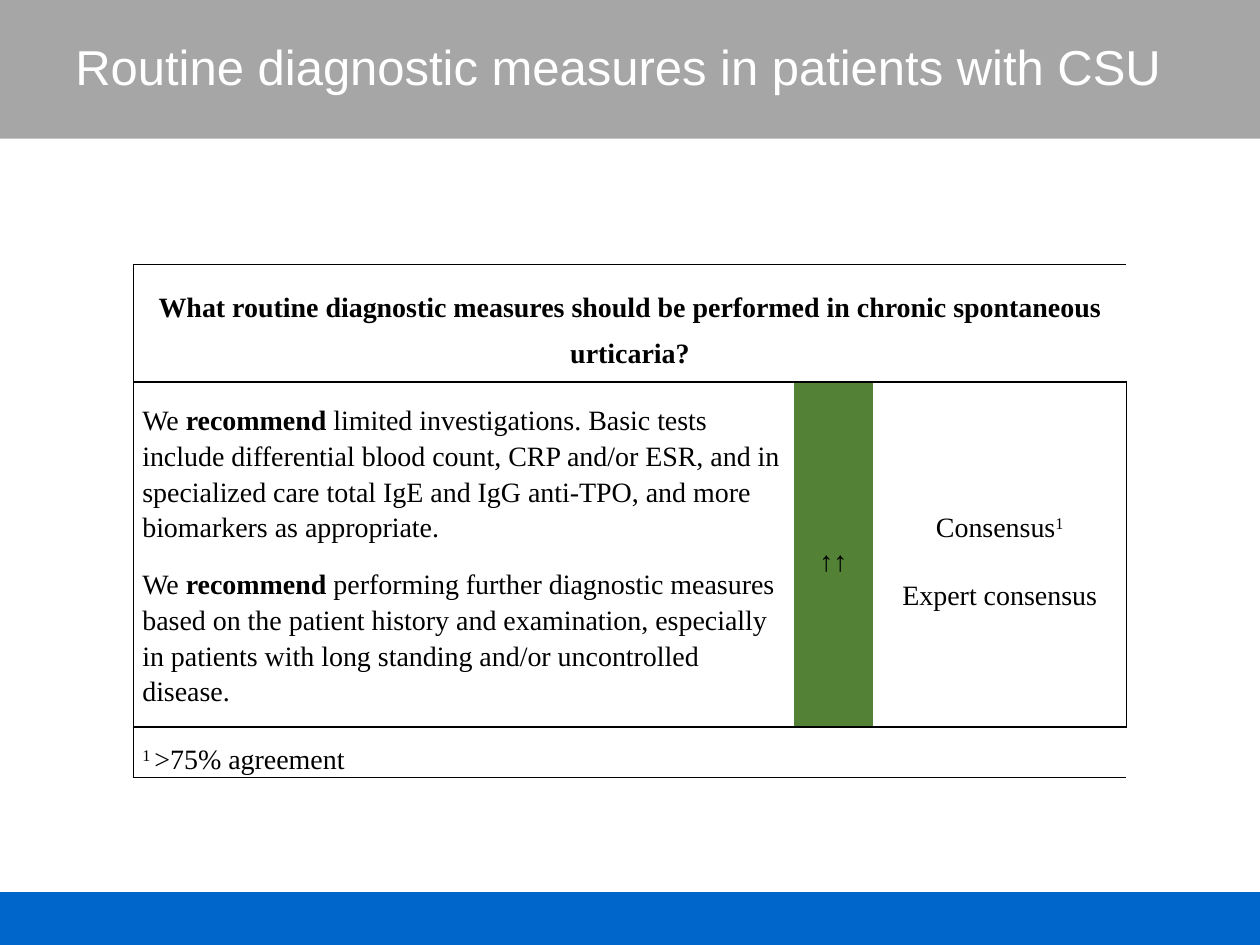
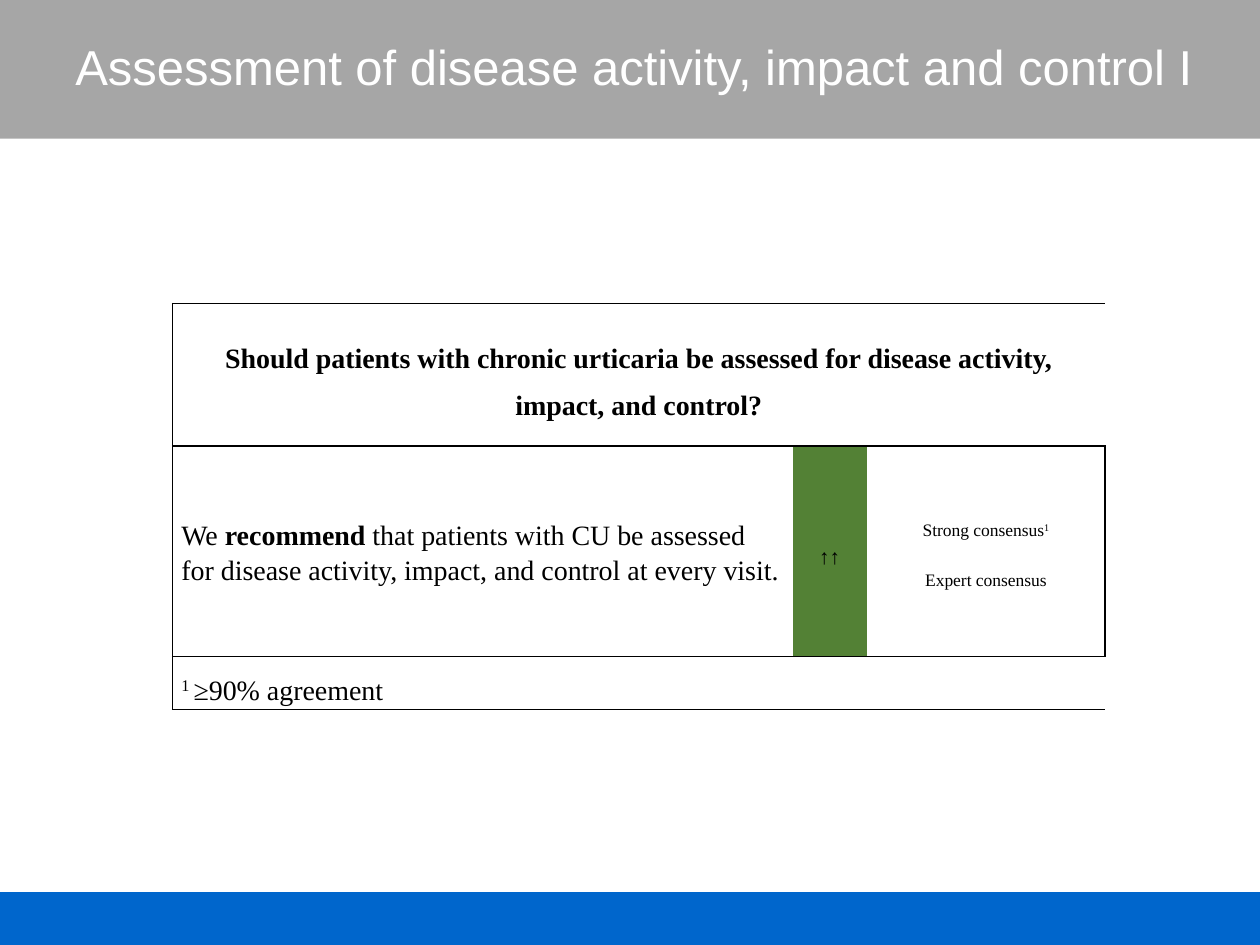
from dataclasses import dataclass

from lxml import etree
from pptx import Presentation
from pptx.dml.color import RGBColor
from pptx.enum.shapes import MSO_SHAPE as Shape
from pptx.enum.text import MSO_ANCHOR as Anchor, PP_ALIGN as Align
from pptx.oxml.ns import qn
from pptx.util import Inches, Pt


@dataclass(frozen=True)
class Theme:
    header: str = "A6A6A6"
    footer: str = "0066CC"
    title: str = "FFFFFF"
    text: str = "000000"
    strength: str = "538135"
    title_font: str = "Arial"
    table_font: str = "Times New Roman"
    title_size: int = 28
    body_size: int = 16
    medium_size: int = 12
    small_size: int = 10
    border_width: int = 1


THEME = Theme()
BOLD, SUPERSCRIPT = "bold", "superscript"
RECOMMEND = ("recommend", BOLD)


class Deck:
    """Holds the theme and the current slide and draws each kind of element."""

    def __init__(self, theme):
        self.theme = theme
        self.presentation = Presentation()
        self.presentation.slide_width = Inches(10)
        self.presentation.slide_height = Inches(7.5)
        self.slide = None

    def add_slide(self, title, title_width):
        self.slide = self.presentation.slides.add_slide(self.presentation.slide_layouts[6])
        self.band(7.08, 0.42, self.theme.footer)
        self.band(0, 1.1, self.theme.header)
        self.title(title, title_width)

    def band(self, top, height, color):
        band = self.slide.shapes.add_shape(
            Shape.RECTANGLE, 0, Inches(top), self.presentation.slide_width, Inches(height))
        band.shadow.inherit = False
        band.fill.solid()
        band.fill.fore_color.rgb = RGBColor.from_string(color)
        band.line.fill.background()

    def title(self, text, width):
        box = self.slide.shapes.add_textbox(Inches(0.5), Inches(0.22), Inches(width), Inches(0.61))
        box.text_frame.word_wrap = True
        box.text_frame.vertical_anchor = Anchor.MIDDLE
        paragraph = box.text_frame.paragraphs[0]
        paragraph.text = text
        self.set_font(paragraph.font, self.theme.title_font, self.theme.title_size, self.theme.title)

    def set_font(self, font, name, size, color):
        font.name = name
        font.size = Pt(size)
        font.color.rgb = RGBColor.from_string(color)

    def recommendation_table(self, left, top, widths, heights, question, advice,
                             consensus, agreement, arrow_size, consensus_size):
        body = self.theme.body_size
        table = self.slide.shapes.add_table(
            len(heights), len(widths), Inches(left), Inches(top),
            Inches(sum(widths)), Inches(sum(heights))).table
        table.first_row = table.horz_banding = False
        for column, width in zip(table.columns, widths):
            column.width = Inches(width)
        for row, height in zip(table.rows, heights):
            row.height = Inches(height)
        last = len(widths) - 1
        for row in range(len(heights)):
            for column in range(len(widths)):
                sides = "TB" + "L" * (column == 0) + "R" * (column == last)
                self.format_cell(table.cell(row, column), sides,
                                 self.theme.strength if (row, column) == (1, 1) else None)
        for row in (0, 2):
            table.cell(row, 0).merge(table.cell(row, last))

        self.fill_text(table.cell(0, 0), [[(question, BOLD)]], body, Align.CENTER)
        self.fill_text(table.cell(1, 0), advice, body, Align.LEFT, line_spacing=1.15)
        self.fill_text(table.cell(1, 1), [[("↑↑", BOLD)]], arrow_size, Align.CENTER,
                       before=0, after=8)
        self.fill_text(table.cell(1, 2), [[consensus, ("1", SUPERSCRIPT)], ["Expert consensus"]],
                       consensus_size, Align.CENTER)
        self.fill_text(table.cell(2, 0), [[("1 ", SUPERSCRIPT), agreement]], body,
                       Align.JUSTIFY, before=3, after=3)

    def format_cell(self, cell, sides, fill):
        cell.vertical_anchor = Anchor.MIDDLE
        cell.margin_left = cell.margin_right = Inches(0.07)
        cell.margin_top = cell.margin_bottom = 0
        properties = cell._tc.get_or_add_tcPr()
        for side in "LRTB":
            line = etree.SubElement(properties, qn(f"a:ln{side}"), w=str(Pt(self.theme.border_width)))
            if side in sides:
                solid = etree.SubElement(line, qn("a:solidFill"))
                etree.SubElement(solid, qn("a:srgbClr"), val=self.theme.text)
            else:
                etree.SubElement(line, qn("a:noFill"))
        if fill:
            cell.fill.solid()
            cell.fill.fore_color.rgb = RGBColor.from_string(fill)
        else:
            cell.fill.background()

    def fill_text(self, cell, paragraphs, size, alignment, line_spacing=1.5, before=6, after=6):
        frame = cell.text_frame
        for index, pieces in enumerate(paragraphs):
            paragraph = frame.add_paragraph() if index else frame.paragraphs[0]
            paragraph.alignment = alignment
            paragraph.line_spacing = line_spacing
            paragraph.space_before, paragraph.space_after = Pt(before), Pt(after)
            self.set_font(paragraph.font, self.theme.table_font, size, self.theme.text)
            for piece in pieces:
                text, style = (piece, None) if isinstance(piece, str) else piece
                run = paragraph.add_run()
                run.text = text
                run.font.bold = style == BOLD
                if style == SUPERSCRIPT:
                    run._r.get_or_add_rPr().set("baseline", "30000")


def main():
    deck = Deck(THEME)

    deck.add_slide("Routine diagnostic measures in patients with CSU", 9)
    deck.recommendation_table(
        1.06, 2.1, (5.24, 0.63, 2.01), (0.93, 2.74, 0.35),
        question="What routine diagnostic measures should be performed in "
                 "chronic spontaneous urticaria?",
        advice=[
            ["We ", RECOMMEND, " limited investigations. Basic tests include differential blood "
             "count, CRP and/or ESR, and in specialized care total IgE and IgG anti-TPO, "
             "and more biomarkers as appropriate."],
            ["We ", RECOMMEND, " performing further diagnostic measures based on the patient "
             "history and examination, especially in patients with long standing and/or "
             "uncontrolled disease."],
        ],
        consensus="Consensus", agreement=">75% agreement",
        arrow_size=THEME.body_size, consensus_size=THEME.body_size)

    deck.add_slide("Assessment of disease activity, impact and control I", 9.15)
    deck.recommendation_table(
        1.37, 2.41, (4.92, 0.59, 1.89), (1.13, 1.67, 0.42),
        question="Should patients with chronic urticaria be assessed for disease activity, "
                 "impact, and control?",
        advice=[["We ", RECOMMEND, " that patients with CU be assessed for disease activity, "
                 "impact, and control at every visit."]],
        consensus="Strong consensus", agreement="≥90% agreement",
        arrow_size=THEME.medium_size, consensus_size=THEME.small_size)

    deck.presentation.save("out.pptx")


if __name__ == "__main__":
    main()
